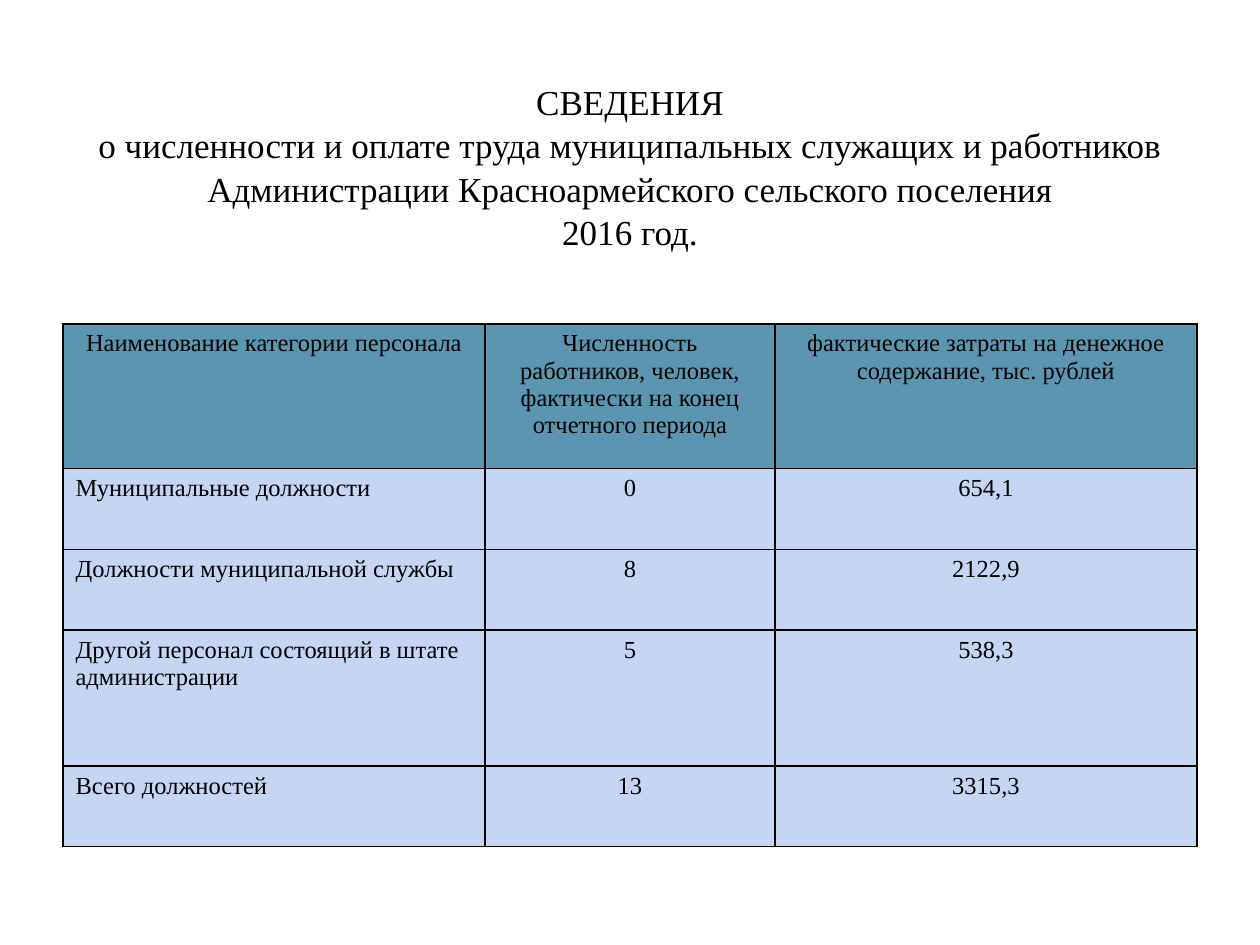
from lxml import etree
from pptx import Presentation
from pptx.dml.color import RGBColor
from pptx.enum.text import MSO_ANCHOR, PP_ALIGN
from pptx.oxml.ns import qn
from pptx.util import Inches, Pt

LEFT, CENTER = PP_ALIGN.LEFT, PP_ALIGN.CENTER
MIDDLE = MSO_ANCHOR.MIDDLE
FONT = "Times New Roman"
COLORS = {"text": "000000", "line": "000000", "head": "5B96B1", "body": "C6D5F2"}
TITLE = [
    "СВЕДЕНИЯ",
    "о численности и оплате труда муниципальных служащих и работников "
    "Администрации Красноармейского сельского поселения",
    "2016 год.",
]
COLS = [3.35, 2.3, 3.35]
ROWS = [1.15, 0.64, 0.64, 1.08, 0.64]
DATA = [
    [
        "Наименование категории персонала",
        "Численность работников, человек,\nфактически на конец отчетного периода",
        "фактические затраты на денежное содержание, тыс. рублей",
    ],
    ["Муниципальные должности", "0", "654,1"],
    ["Должности муниципальной службы", "8", "2122,9"],
    ["Другой персонал состоящий в штате администрации", "5", "538,3"],
    ["Всего должностей", "13", "3315,3"],
]


def add_run(para, text, size):
    """Add one styled run to a paragraph."""
    run = para.add_run()
    run.text = text
    run.font.name = FONT
    run.font.size = Pt(size)
    run.font.color.rgb = RGBColor.from_string(COLORS["text"])


def set_title(slide):
    """Place and fill the title."""
    title = slide.shapes.title
    title.left, title.top = Inches(0.5), Inches(0.3)
    title.width, title.height = Inches(9), Inches(2.03)
    frame = title.text_frame
    frame.word_wrap = True
    frame.vertical_anchor = MIDDLE
    para = frame.paragraphs[0]
    para.alignment = CENTER
    para.line_spacing = 1.04
    for i, line in enumerate(TITLE):
        if i:
            para.add_line_break()
        add_run(para, line, 20)


def set_edges(cell):
    """Draw a thin line on all four sides of a cell."""
    props = cell._tc.get_or_add_tcPr()
    for i, tag in enumerate(("a:lnL", "a:lnR", "a:lnT", "a:lnB")):
        line = etree.Element(qn(tag), w=str(Pt(1)))
        fill = etree.SubElement(line, qn("a:solidFill"))
        etree.SubElement(fill, qn("a:srgbClr"), val=COLORS["line"])
        props.insert(i, line)


def fill_cell(cell, text, color, align):
    """Set the text, fill and edges of a cell."""
    cell.fill.solid()
    cell.fill.fore_color.rgb = RGBColor.from_string(color)
    set_edges(cell)
    frame = cell.text_frame
    for i, line in enumerate(text.split("\n")):
        para = frame.add_paragraph() if i else frame.paragraphs[0]
        para.alignment = align
        add_run(para, line, 14)


def add_staff(slide):
    """Add the staff table."""
    table = slide.shapes.add_table(
        len(ROWS), len(COLS), Inches(0.5), Inches(2.57),
        Inches(sum(COLS)), Inches(sum(ROWS)),
    ).table
    for col, width in zip(table.columns, COLS):
        col.width = Inches(width)
    for row, height in zip(table.rows, ROWS):
        row.height = Inches(height)
    for r, texts in enumerate(DATA):
        for c, text in enumerate(texts):
            color = COLORS["body" if r else "head"]
            align = LEFT if r and not c else CENTER
            fill_cell(table.cell(r, c), text, color, align)


def main():
    """Build and save the slide."""
    deck = Presentation()
    deck.slide_width, deck.slide_height = Inches(10), Inches(7.5)
    slide = deck.slides.add_slide(deck.slide_layouts[5])
    set_title(slide)
    add_staff(slide)
    deck.save("out.pptx")


if __name__ == "__main__":
    main()
